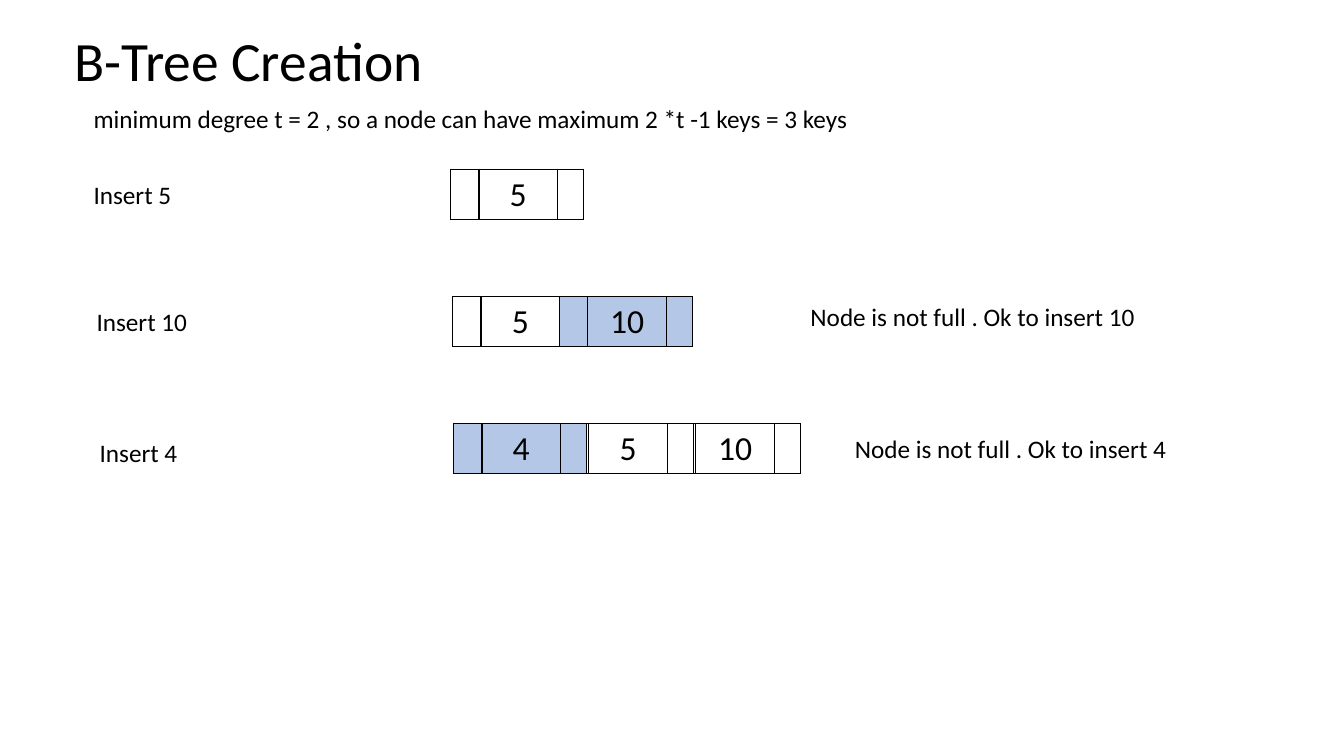
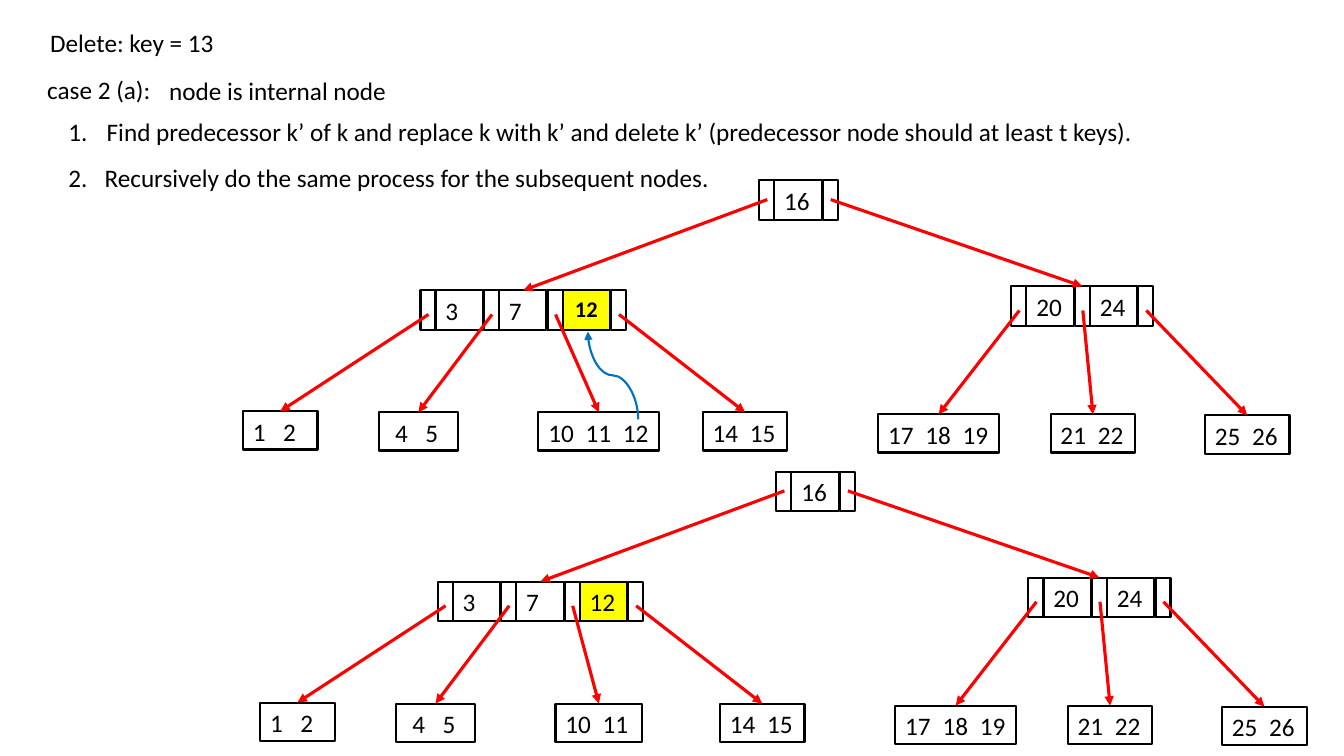
from dataclasses import dataclass, replace

from pptx import Presentation
from pptx.dml.color import RGBColor
from pptx.enum.shapes import MSO_CONNECTOR, MSO_SHAPE
from pptx.enum.text import MSO_ANCHOR, PP_ALIGN
from pptx.oxml.ns import qn
from pptx.oxml.xmlchemy import OxmlElement
from pptx.shapes.connector import Connector
from pptx.slide import Slide
from pptx.text.text import TextFrame
from pptx.util import Inches, Pt

BLACK = RGBColor(0x00, 0x00, 0x00)
RED = RGBColor(0xFF, 0x00, 0x00)
BLUE = RGBColor(0x00, 0x70, 0xC0)
PALE_BLUE = RGBColor(0xB4, 0xC7, 0xE7)
YELLOW = RGBColor(0xFF, 0xFF, 0x00)

FONT = "Calibri"
BODY_SIZE = 18
LEFT, CENTER = PP_ALIGN.LEFT, PP_ALIGN.CENTER
TOP, MIDDLE = MSO_ANCHOR.TOP, MSO_ANCHOR.MIDDLE
RECTANGLE = MSO_SHAPE.RECTANGLE
STRAIGHT, CURVE = MSO_CONNECTOR.STRAIGHT, MSO_CONNECTOR.CURVE

CELL_WIDTHS = (0.28, 0.78, 0.26)
CELL_HEIGHT = 0.5
CELL_STEP = 1.06  # neighbours share a pointer cell

POINTER_WIDTH = 0.15
KEY_WIDTH = 0.47
KEY_STEP = 0.63
NODE_HEIGHT = 0.39
LEAF_HEIGHT = 0.38

Point = tuple[float, float]


@dataclass(frozen=True)
class Insertion:
    label: str
    label_at: Point
    keys: tuple[str, ...]
    keys_at: Point
    new_key: str = ""
    remark: str = ""
    remark_at: Point = (0, 0)


@dataclass(frozen=True)
class Leaf:
    left: float
    top: float
    keys: tuple[str, ...]
    width: float = 0.84
    key_step: float = 0.37
    inset: float = 0.1


@dataclass(frozen=True)
class Node:
    left: float
    top: float
    keys: tuple[str, ...]
    children: tuple["Node | Leaf", ...]
    arrow_drop: float = 0.24

    @property
    def width(self) -> float:
        return len(self.keys) * KEY_STEP + POINTER_WIDTH


INSERTIONS = (
    Insertion("Insert 5", (0.83, 1.73), ("5",), (4.47, 1.68)),
    Insertion("Insert 10", (0.86, 2.99), ("5", "10"), (4.49, 2.94), "10",
              "Node is not full . Ok to insert 10", (7.94, 2.94)),
    Insertion("Insert 4", (0.89, 4.29), ("4", "5", "10"), (4.5, 4.2), "4",
              "Node is not full . Ok to insert 4", (8.38, 4.25)),
)

PREDECESSOR_LEAF = Leaf(5.34, 4.09, ("10", "11", "12"), 1.2)
TRIMMED_LEAF = replace(PREDECESSOR_LEAF, keys=("10", "11"), width=0.86)


def make_tree(predecessor_leaf: Leaf) -> Node:
    left_node = Node(4.17, 2.88, ("3", "7", "12"), (
        Leaf(2.41, 4.08, ("1", "2"), 0.74, 0.3),
        Leaf(3.76, 4.09, ("4", "5"), 0.78, 0.3, 0.16),
        predecessor_leaf,
        Leaf(6.97, 4.09, ("14", "15")),
    ))
    right_node = Node(10.03, 2.84, ("20", "24"), (
        Leaf(8.71, 4.11, ("17", "18", "19"), 1.2),
        Leaf(10.42, 4.11, ("21", "22")),
        Leaf(11.95, 4.12, ("25", "26")),
    ))
    return Node(7.53, 1.79, ("16",), (left_node, right_node), 0.19)


def write(frame: TextFrame, text: str, *, size: float = BODY_SIZE,
          bold: bool = False, align: PP_ALIGN = LEFT,
          anchor: MSO_ANCHOR = TOP, inset: float = 0.1,
          right_inset: float = 0.1, tabs: tuple[float, ...] = (),
          number: int = 0, indent: float = 0.38,
          line_spacing: float = 1.0) -> None:
    frame.word_wrap = True
    frame.vertical_anchor = anchor
    frame.margin_left, frame.margin_right = Inches(inset), Inches(right_inset)
    frame.margin_top = frame.margin_bottom = Inches(0.05)
    para = frame.paragraphs[0]
    para.alignment = align
    para.line_spacing = line_spacing
    properties = para._p.get_or_add_pPr()
    if number:
        properties.set("marL", str(Inches(indent)))
        properties.set("indent", str(-Inches(indent)))
        add_child(properties, "a:buAutoNum", type="arabicPeriod", startAt=number)
    if tabs:
        tab_list = add_child(properties, "a:tabLst")
        for position in tabs:
            add_child(tab_list, "a:tab", pos=Inches(position), algn="l")
    span = para.add_run()
    span.text = text
    span.font.name = FONT
    span.font.size = Pt(size)
    span.font.bold = bold
    span.font.color.rgb = BLACK


def add_child(parent, tag: str, **attributes):
    child = OxmlElement(tag)
    for name, value in attributes.items():
        child.set(name, str(value))
    parent.append(child)
    return child


def add_text(page: Slide, text: str, at: Point, width: float,
             height: float = 0.4, **text_format) -> None:
    box = page.shapes.add_textbox(Inches(at[0]), Inches(at[1]),
                                  Inches(width), Inches(height))
    write(box.text_frame, text, **text_format)


def add_box(page: Slide, at: Point, width: float, height: float,
            text: str = "", fill: RGBColor | None = None,
            **text_format) -> None:
    box = page.shapes.add_shape(RECTANGLE, Inches(at[0]), Inches(at[1]),
                                Inches(width), Inches(height))
    box.shadow.inherit = False
    if fill is None:
        box.fill.background()
    else:
        box.fill.solid()
        box.fill.fore_color.rgb = fill
    box.line.color.rgb = BLACK
    box.line.width = Pt(1.5)
    if text:
        write(box.text_frame, text, **text_format)


def add_arrow(page: Slide, start: Point, end: Point, color: RGBColor = RED,
              width: float = 2.25, kind: MSO_CONNECTOR = STRAIGHT) -> Connector:
    arrow = page.shapes.add_connector(kind, Inches(start[0]), Inches(start[1]),
                                      Inches(end[0]), Inches(end[1]))
    arrow.line.color.rgb = color
    arrow.line.width = Pt(width)
    add_child(arrow.line._get_or_add_ln(), "a:tailEnd", type="triangle")
    add_child(arrow._element.spPr, "a:effectLst")
    return arrow


def add_rising_curve(page: Slide, start: Point, end: Point) -> None:
    """Draw an S-curve that leaves and arrives vertically."""
    middle_x, middle_y = (start[0] + end[0]) / 2, (start[1] + end[1]) / 2
    half_run, half_rise = (start[0] - end[0]) / 2, (start[1] - end[1]) / 2
    curve = add_arrow(page, (middle_x - half_rise, middle_y + half_run),
                      (middle_x + half_rise, middle_y - half_run),
                      BLUE, 1.5, CURVE)
    curve._element.spPr.find(qn("a:xfrm")).set("rot", str(270 * 60000))


def add_key_table(page: Slide, key: str, at: Point,
                  fill: RGBColor | None) -> None:
    """Draw one key between its two pointer cells."""
    table = page.shapes.add_table(
        1, len(CELL_WIDTHS), Inches(at[0]), Inches(at[1]),
        Inches(sum(CELL_WIDTHS)), Inches(CELL_HEIGHT)).table
    table.first_row = table.horz_banding = False
    for index, width in enumerate(CELL_WIDTHS):
        table.columns[index].width = Inches(width)
        cell = table.cell(0, index)
        properties = cell._tc.get_or_add_tcPr()
        for side in ("a:lnL", "a:lnR", "a:lnT", "a:lnB"):
            border = add_child(properties, side, w=Pt(1))
            add_child(add_child(border, "a:solidFill"), "a:srgbClr", val=BLACK)
        if fill is None:
            cell.fill.background()
        else:
            cell.fill.solid()
            cell.fill.fore_color.rgb = fill
    key_cell = table.cell(0, 1)
    write(key_cell.text_frame, key, size=24, align=CENTER)
    key_cell.vertical_anchor = MIDDLE


def add_leaf(page: Slide, leaf: Leaf) -> None:
    stops = tuple(leaf.key_step * index for index in range(1, len(leaf.keys)))
    add_box(page, (leaf.left, leaf.top), leaf.width, LEAF_HEIGHT,
            "\t".join(leaf.keys), inset=leaf.inset, right_inset=0, tabs=stops)


def add_tree(page: Slide, node: Node, marked_key: str, marked_format: dict) -> None:
    for index, key in enumerate(node.keys):
        key_at = (node.left + POINTER_WIDTH + index * KEY_STEP, node.top)
        key_format = marked_format if key == marked_key else {"right_inset": 0}
        add_box(page, key_at, KEY_WIDTH, NODE_HEIGHT, key, **key_format)
    for index, child in enumerate(node.children):
        pointer_left = node.left + index * KEY_STEP
        add_box(page, (pointer_left, node.top), POINTER_WIDTH, NODE_HEIGHT)
        if isinstance(child, Leaf):
            add_leaf(page, child)
        else:
            add_tree(page, child, marked_key, marked_format)
        add_arrow(page, (pointer_left + 0.08, node.top + node.arrow_drop),
                  (child.left + child.width / 2, child.top))


def shift(part: Node | Leaf, right: float, down: float) -> Node | Leaf:
    moved = replace(part, left=part.left + right, top=part.top + down)
    if isinstance(part, Leaf):
        return moved
    return replace(moved, children=tuple(
        shift(child, right, down) for child in part.children))


def build_creation(page: Slide) -> None:
    add_text(page, "B-Tree Creation", (0.64, 0.31), 11.5, 0.64,
             size=39.6, anchor=MIDDLE, line_spacing=0.9)
    add_text(page, "minimum degree t = 2 , so a node can have maximum "
             "2 *t -1 keys = 3 keys", (0.83, 0.98), 8.85)
    for step in INSERTIONS:
        add_text(page, step.label, step.label_at, 2.16)
        left, top = step.keys_at
        for index, key in enumerate(step.keys):
            fill = PALE_BLUE if key == step.new_key else None
            add_key_table(page, key, (left + index * CELL_STEP, top), fill)
        if step.remark:
            add_text(page, step.remark, step.remark_at, 3.78)


def build_deletion(page: Slide) -> None:
    add_text(page, "Delete: key = 13", (0.4, 0.22), 2.54)
    add_text(page, "case 2 (a):", (0.37, 0.69), 1.38)
    add_text(page, "node is internal node", (1.58, 0.7), 2.39)
    add_text(page, "Find predecessor k’ of k and replace k with k’ and delete k’ "
             "(predecessor node should at least t keys).",
             (0.58, 1.11), 11.49, number=1)
    add_text(page, "Recursively do the same process for the subsequent nodes.",
             (0.58, 1.56), 8.23, number=2, indent=0.36)
    add_tree(page, make_tree(PREDECESSOR_LEAF), "12",
             {"fill": YELLOW, "size": 16, "bold": True, "align": CENTER})
    add_rising_curve(page, (6.33, 4.16), (5.83, 3.29))
    add_tree(page, shift(make_tree(TRIMMED_LEAF), 0.17, 2.89), "12",
             {"fill": YELLOW, "right_inset": 0})


def main() -> None:
    deck = Presentation()
    deck.slide_width, deck.slide_height = Inches(13.33), Inches(7.5)
    blank = deck.slide_layouts[6]
    for build in (build_creation, build_deletion):
        build(deck.slides.add_slide(blank))
    deck.save("out.pptx")


if __name__ == "__main__":
    main()
